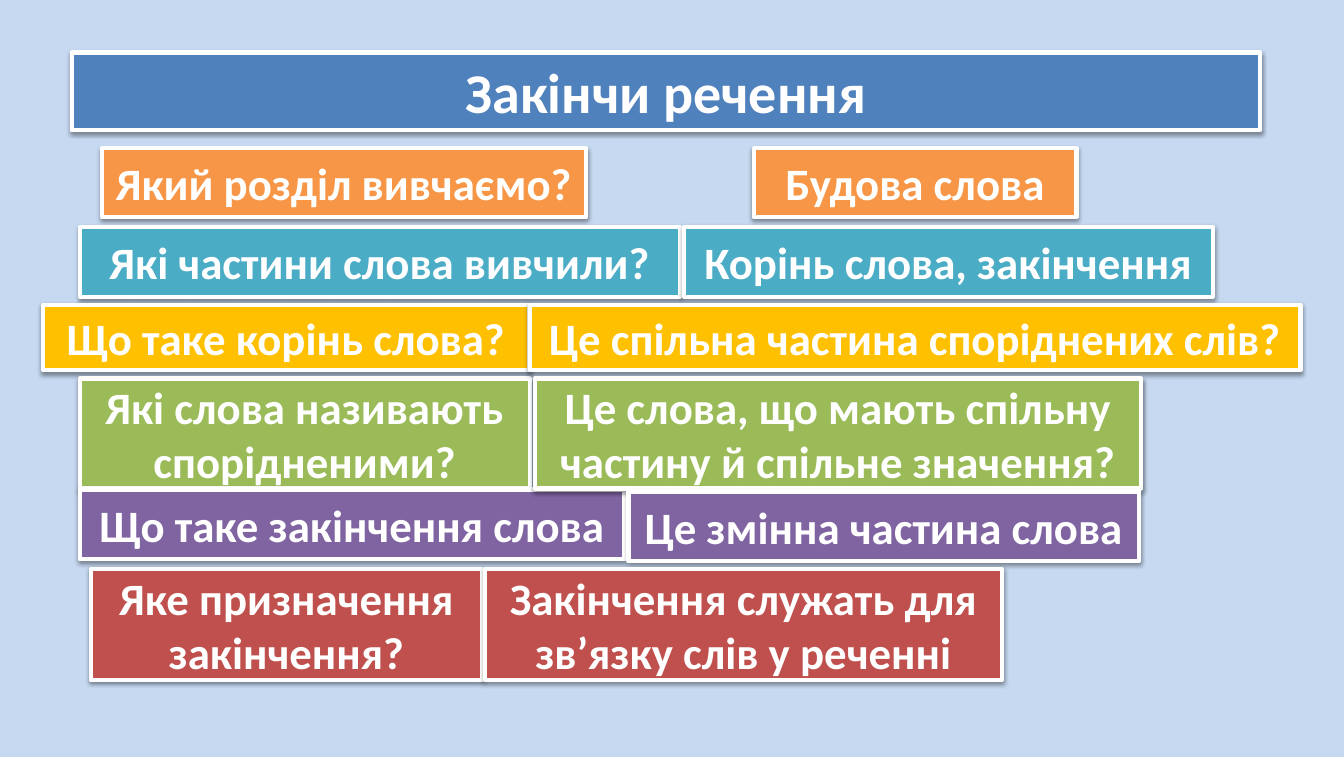
from dataclasses import dataclass
from lxml.etree import fromstring
from pptx import Presentation
from pptx.dml.color import RGBColor as Rgb
from pptx.enum.shapes import MSO_SHAPE as Shape
from pptx.enum.text import MSO_ANCHOR as Anchor, PP_ALIGN as Align
from pptx.util import Inches, Pt


@dataclass(frozen=True)
class Theme:
    """Colours, type sizes and the grid cell in inches."""
    font: str = "Calibri"
    head: int = 40
    body: int = 32
    edge: int = 3
    cell: float = 0.1
    back: str = "C6D9F1"
    white: str = "FFFFFF"
    blue: str = "4F81BD"
    orange: str = "F79646"
    teal: str = "4BACC6"
    gold: str = "FFC000"
    green: str = "9BBB59"
    purple: str = "8064A2"
    red: str = "C0504D"


THEME = Theme()
COLS, ROWS = 133.2, 75
TITLE = (7.1, 5.2, 117.8, 7.7)
BOARD = (4.3, 14.7, 124.6, 52.7)
SHADE = (
    '<a:effectLst xmlns:a="http://schemas.openxmlformats.org/drawingml/2006/main">'
    '<a:outerShdw blurRad="39370" dist="20320" dir="5400000" rotWithShape="0">'
    '<a:srgbClr val="000000"><a:alpha val="38000"/></a:srgbClr>'
    '</a:outerShdw></a:effectLst>'
)

BANDS = [
    (0, 6.8, THEME.orange),
    (7.8, 6.9, THEME.teal),
    (15.5, 6.5, THEME.gold),
    (22.8, 10.9, THEME.green),
    (33.8, 6.9, THEME.purple),
    (41.7, 11, THEME.red),
]
ASKS = [
    (5.8, 48, 0, "Який розділ вивчаємо?"),
    (3.6, 59.5, 0, "Які частини слова вивчили?"),
    (0, 48.1, 0, "Що таке корінь слова?"),
    (3.6, 44.6, 0, "Які слова називають спорідненими?"),
    (3.6, 54, 0, "Що таке закінчення слова"),
    (4.7, 38.8, 0, "Яке призначення закінчення?"),
]
REPLIES = [
    (70.4, 32, 0, "Будова слова"),
    (63.5, 52.4, 0, "Корінь слова, закінчення"),
    (48.2, 76.4, 0, "Це спільна частина споріднених слів?"),
    (48.7, 60.1, 0, "Це слова, що мають спільну частину й спільне значення?"),
    (58, 50.6, 0.2, "Це змінна частина слова"),
    (43.8, 51.2, 0, "Закінчення служать для зв’язку слів у реченні"),
]


def grid(count):
    """Turn grid cells into a length."""
    return Inches(count * THEME.cell)


def card(slide, box, text, fill, size):
    """Draw one shaded, framed card with centred bold text."""
    shape = slide.shapes.add_shape(Shape.RECTANGLE, *map(grid, box))
    shape.fill.solid()
    shape.fill.fore_color.rgb = Rgb.from_string(fill)
    shape.line.color.rgb = Rgb.from_string(THEME.white)
    shape.line.width = Pt(THEME.edge)
    shape.shadow.inherit = False
    props = shape.element.spPr
    props.replace(props[-1], fromstring(SHADE))
    frame = shape.text_frame
    frame.word_wrap = True
    frame.vertical_anchor = Anchor.MIDDLE
    frame.margin_left = frame.margin_right = Inches(0.12)
    frame.margin_top = frame.margin_bottom = Inches(0.06)
    frame.text = text
    line = frame.paragraphs[0]
    line.alignment = Align.CENTER
    font = line.runs[0].font
    font.name, font.size, font.bold = THEME.font, Pt(size), True
    font.color.rgb = Rgb.from_string(THEME.white)


def title(slide, box):
    """Draw the heading bar in its box."""
    card(slide, box, "Закінчи речення", THEME.blue, THEME.head)


def stack(slide, box, items):
    """Draw one card per colour band, relative to the board's corner."""
    left, top = box[:2]
    for (row, high, fill), (col, wide, drop, text) in zip(BANDS, items):
        place = (left + col, top + row + drop, wide, high)
        card(slide, place, text, fill, THEME.body)


def main():
    """Build and save the slide."""
    deck = Presentation()
    deck.slide_width, deck.slide_height = grid(COLS), grid(ROWS)
    slide = deck.slides.add_slide(deck.slide_layouts[6])
    slide.background.fill.solid()
    slide.background.fill.fore_color.rgb = Rgb.from_string(THEME.back)
    title(slide, TITLE)
    stack(slide, BOARD, ASKS)
    stack(slide, BOARD, REPLIES)
    deck.save("out.pptx")


if __name__ == "__main__":
    main()
